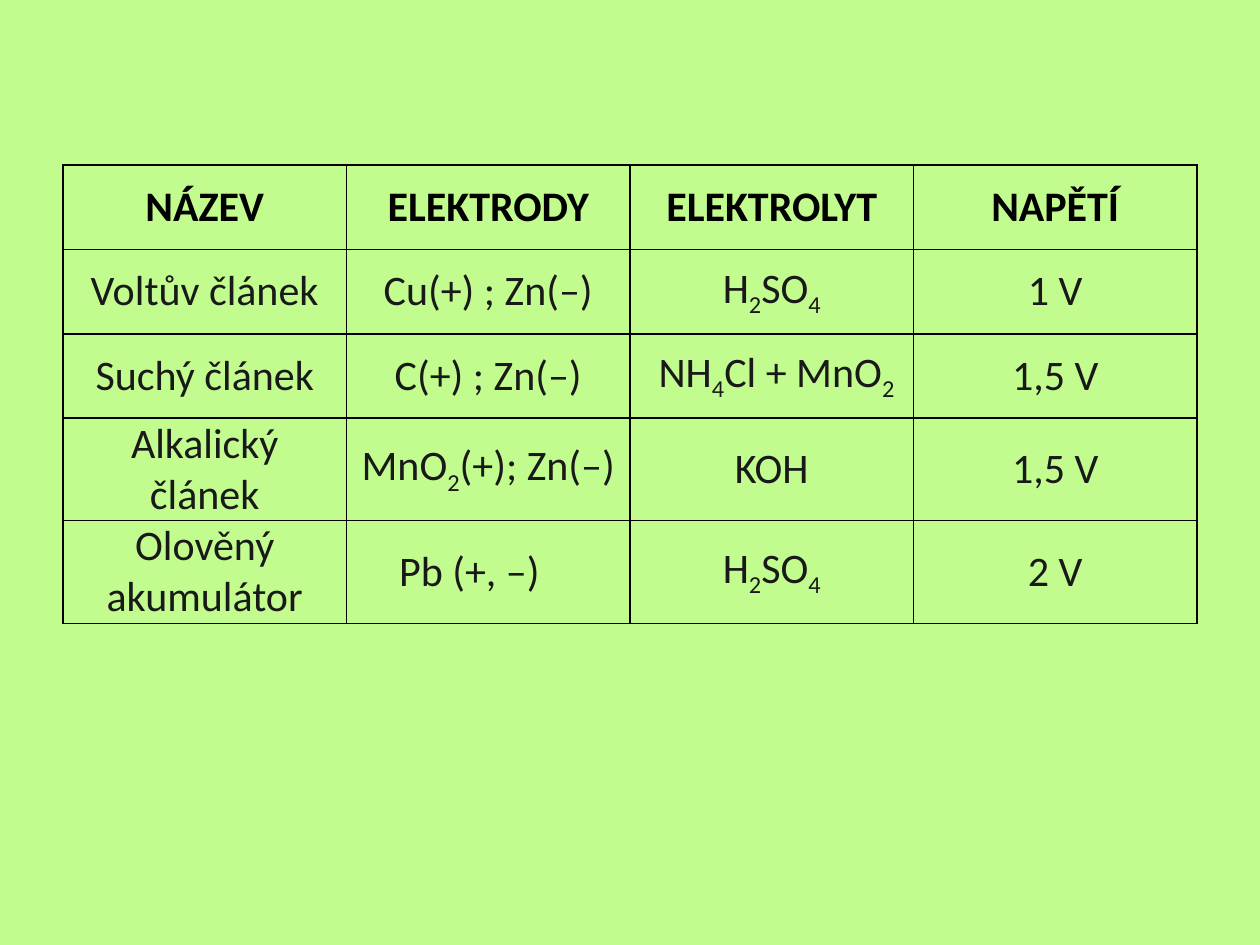
from lxml.etree import SubElement
from pptx import Presentation
from pptx.dml.color import RGBColor
from pptx.enum.text import MSO_ANCHOR, PP_ALIGN
from pptx.oxml.ns import qn
from pptx.util import Inches, Pt

COLORS = {"background": "C2FC8E", "header": "000000", "body": "191919", "border": "000000"}

CELLS = [
    ["NÁZEV", "ELEKTRODY", "ELEKTROLYT", "NAPĚTÍ"],
    ["Voltův článek", "Cu(+) ; Zn(–)", "H_2SO_4", "1 V"],
    ["Suchý článek", "C(+) ; Zn(–)", " NH_4Cl + MnO_2", "1,5 V"],
    ["Alkalický článek", "MnO_2(+); Zn(–)", "KOH", "1,5 V"],
    ["Olověný akumulátor", "Pb (+, –)", "H_2SO_4", "2 V"],
]


class SlideBuilder:
    font_name = "Calibri"
    font_size = Pt(24)
    border_width = Pt(1)
    side_margin = Inches(0.07)

    def __init__(self, slide):
        self.slide = slide

    def background(self, color):
        fill = self.slide.background.fill
        fill.solid()
        fill.fore_color.rgb = RGBColor.from_string(COLORS[color])

    def run(self, paragraph, text, color, bold, subscript=False):
        if not text:
            return
        run = paragraph.add_run()
        run.text = text
        font = run.font
        font.name, font.size, font.bold = self.font_name, self.font_size, bold
        font.color.rgb = RGBColor.from_string(COLORS[color])
        if subscript:
            font._element.set("baseline", "-25000")

    def formula(self, paragraph, text, color, bold):
        start, *parts = text.split("_")
        self.run(paragraph, start, color, bold)
        for part in parts:
            self.run(paragraph, part[0], color, bold, subscript=True)
            self.run(paragraph, part[1:], color, bold)

    def borders(self, cell):
        properties = cell._tc.get_or_add_tcPr()
        for side in ("a:lnL", "a:lnR", "a:lnT", "a:lnB"):
            line = SubElement(properties, qn(side), w=str(self.border_width))
            fill = SubElement(line, qn("a:solidFill"))
            SubElement(fill, qn("a:srgbClr"), val=COLORS["border"])

    def cell(self, cell, text, header):
        cell.vertical_anchor = MSO_ANCHOR.MIDDLE
        cell.margin_left = cell.margin_right = self.side_margin
        cell.margin_top = cell.margin_bottom = 0
        self.borders(cell)
        cell.fill.background()
        paragraph = cell.text_frame.paragraphs[0]
        paragraph.alignment = PP_ALIGN.CENTER
        self.formula(paragraph, text, "header" if header else "body", header)

    def table(self, rows, left, top, width, row_height):
        shape = self.slide.shapes.add_table(
            len(rows), len(rows[0]), left, top, width, row_height * len(rows)
        )
        table = shape.table
        table.first_row = table.horz_banding = False
        for row_index, texts in enumerate(rows):
            for column_index, text in enumerate(texts):
                self.cell(table.cell(row_index, column_index), text, row_index == 0)
        return table


def main():
    presentation = Presentation()
    presentation.slide_width = Inches(10)
    presentation.slide_height = Inches(7.5)
    builder = SlideBuilder(presentation.slides.add_slide(presentation.slide_layouts[6]))
    builder.background("background")
    table = builder.table(CELLS, Inches(0.5), Inches(1.31), Inches(9), Inches(0.67))
    lead_electrodes = table.cell(4, 1)
    lead_electrodes.margin_right = Inches(0.37)
    presentation.save("out.pptx")


if __name__ == "__main__":
    main()
